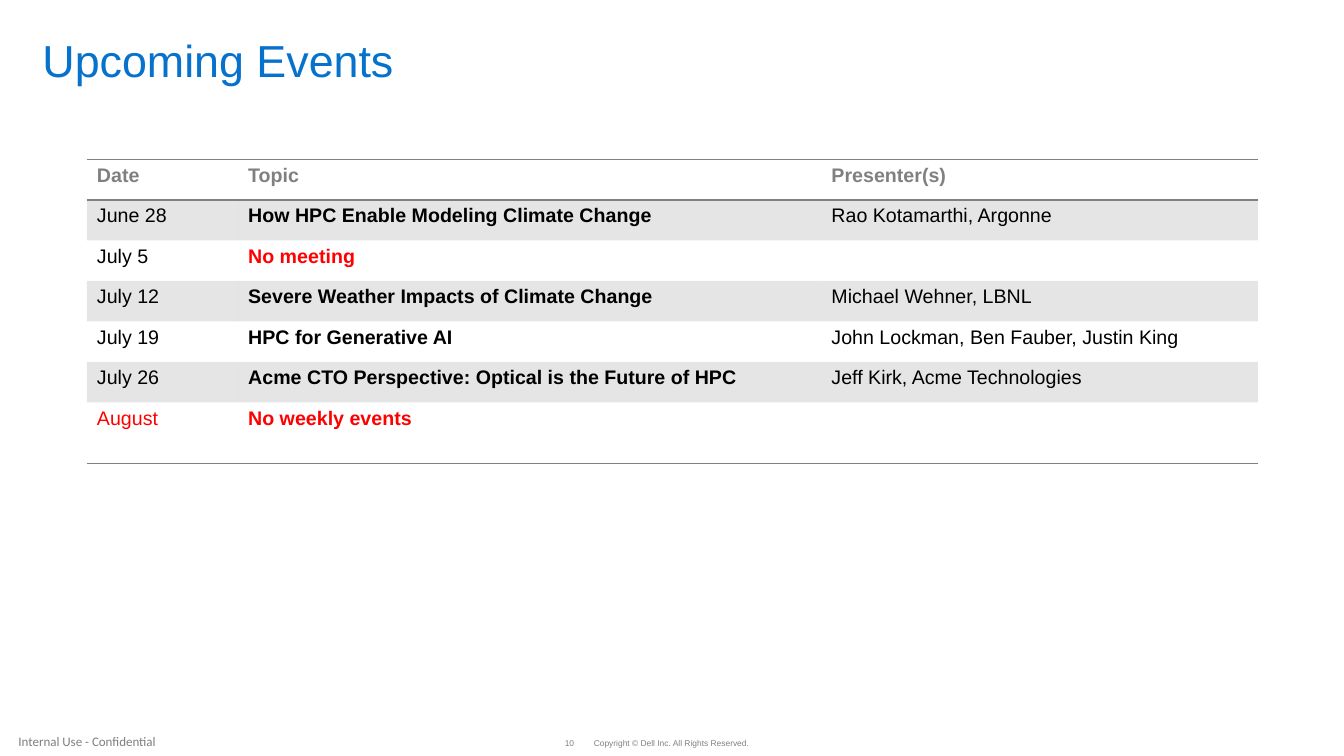
from lxml.etree import SubElement
from pptx import Presentation
from pptx.dml.color import RGBColor as RGB
from pptx.enum.text import MSO_ANCHOR as ANCHOR, PP_ALIGN as ALIGN
from pptx.oxml import parse_xml
from pptx.oxml.ns import nsdecls, qn
from pptx.util import Cm, Pt

COLORS = {"title": "0672CB", "gray": "808080", "footer": "7F7F7F",
          "body": "000000", "alert": "FF0000"}
PLAIN_TABLE = "{2D5ABB26-0587-4C30-8999-92F81FD0307C}"

HEADINGS = ("Date", "Topic", "Presenter(s)")
EVENTS = [
    ("June 28", "How HPC Enable Modeling Climate Change", "Rao Kotamarthi, Argonne"),
    ("July 5", "No meeting", ""),
    ("July 12", "Severe Weather Impacts of Climate Change", "Michael Wehner, LBNL"),
    ("July 19", "HPC for Generative AI", "John Lockman, Ben Fauber, Justin King"),
    ("July 26", "Acme CTO Perspective: Optical is the Future of HPC",
     "Jeff Kirk, Acme Technologies"),
    ("August", "No weekly events", ""),
]


class SlideBuilder:
    def __init__(self, prs, font="Arial"):
        self.s = prs.slides.add_slide(prs.slide_layouts[6])
        self.font = font

    def styled_run(self, p, text, size, color, bold=False, font=None):
        r = p.add_run()
        r.text = text
        style = {"name": font or self.font, "size": Pt(size), "bold": bold}
        for key, value in style.items():
            setattr(r.font, key, value)
        r.font.color.rgb = RGB.from_string(COLORS[color])

    def text(self, box, text, size, color, font=None, align=ALIGN.LEFT,
             anchor=ANCHOR.MIDDLE, wrap=True, spacing=0.9):
        tf = self.s.shapes.add_textbox(*map(Cm, box)).text_frame
        frame = {"margin_left": 0, "margin_right": 0, "margin_top": 0,
                 "margin_bottom": 0, "word_wrap": wrap, "vertical_anchor": anchor}
        for key, value in frame.items():
            setattr(tf, key, value)
        p = tf.paragraphs[0]
        p.alignment, p.line_spacing = align, spacing
        self.styled_run(p, text, size, color, font=font)

    def border(self, cell, sides):
        tc_pr = cell._tc.get_or_add_tcPr()
        for i, side in enumerate(sides):
            tc_pr.insert(i, parse_xml(
                f'<a:ln{side} {nsdecls("a")} w="{Pt(1)}"><a:solidFill>'
                f'<a:srgbClr val="{COLORS["gray"]}"/></a:solidFill></a:ln{side}>'))

    def shade(self, cell, opacity):
        cell.fill.solid()
        cell.fill.fore_color.rgb = RGB.from_string(COLORS["gray"])
        color = next(cell._tc.tcPr.iterchildren(qn("a:solidFill")))[0]
        SubElement(color, qn("a:alpha"), val=str(opacity * 1000))

    def table(self, box, widths, heights, rows):
        sp = self.s.shapes.add_table(len(rows), len(widths), *map(Cm, box))
        table = sp.table
        table.first_row = table.horz_banding = False
        next(sp._element.iter(qn("a:tableStyleId"))).text = PLAIN_TABLE
        for column, width in zip(table.columns, widths):
            column.width = Cm(width)
        for i, (row, height, values) in enumerate(zip(table.rows, heights, rows)):
            row.height = Cm(height)
            header, last = i == 0, i == len(rows) - 1
            for j, (cell, value) in enumerate(zip(row.cells, values)):
                if i % 2:
                    self.shade(cell, 20)
                else:
                    cell.fill.background()
                if header or last:
                    self.border(cell, "TB" if header else "B")
                if value:
                    alert = value.startswith("No ") or value == "August"
                    color = "gray" if header else "alert" if alert else "body"
                    self.styled_run(cell.text_frame.paragraphs[0], value, 14, color,
                                    bold=header or j == 1)


def main():
    prs = Presentation()
    prs.slide_width, prs.slide_height = Cm(33.87), Cm(19.05)
    slide = SlideBuilder(prs)
    slide.text((14.94, 18.62, 3.96, 0.23), "Copyright © Dell Inc. All Rights Reserved.",
               6, "gray", align=ALIGN.CENTER, wrap=False)
    slide.text((14.22, 18.62, 0.25, 0.23), "10", 6, "gray",
               align=ALIGN.RIGHT, wrap=False)
    slide.text((0, 18.47, 4.39, 0.4), "Internal Use - Confidential", 9.3, "footer",
               font="Calibri", align=ALIGN.CENTER, spacing=1.0)
    slide.text((1.07, 0.97, 31.75, 1.22), "Upcoming Events", 32, "title",
               anchor=ANCHOR.TOP)
    slide.table((2.19, 4.02, 29.51, 7.66), (3.81, 14.7, 11),
                [1.02] * len(EVENTS) + [1.54], [HEADINGS] + EVENTS)
    prs.save("out.pptx")


if __name__ == "__main__":
    main()
